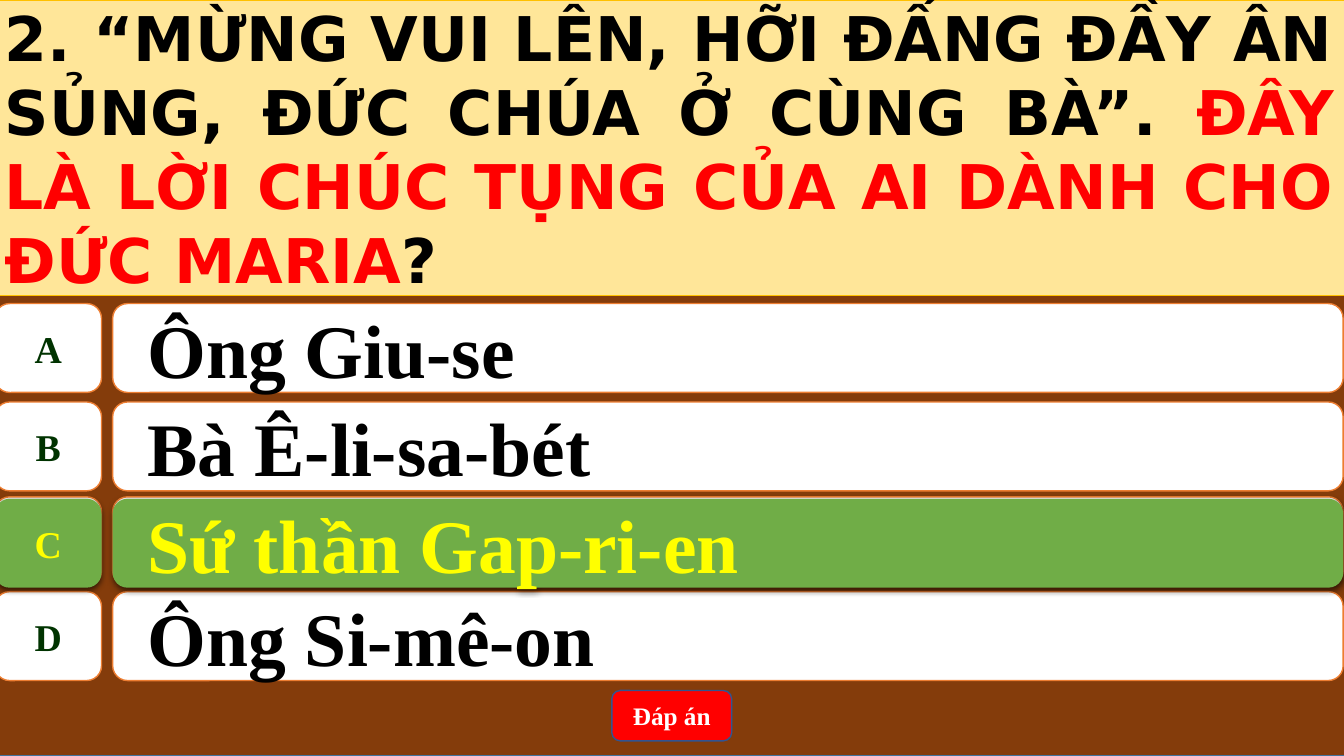
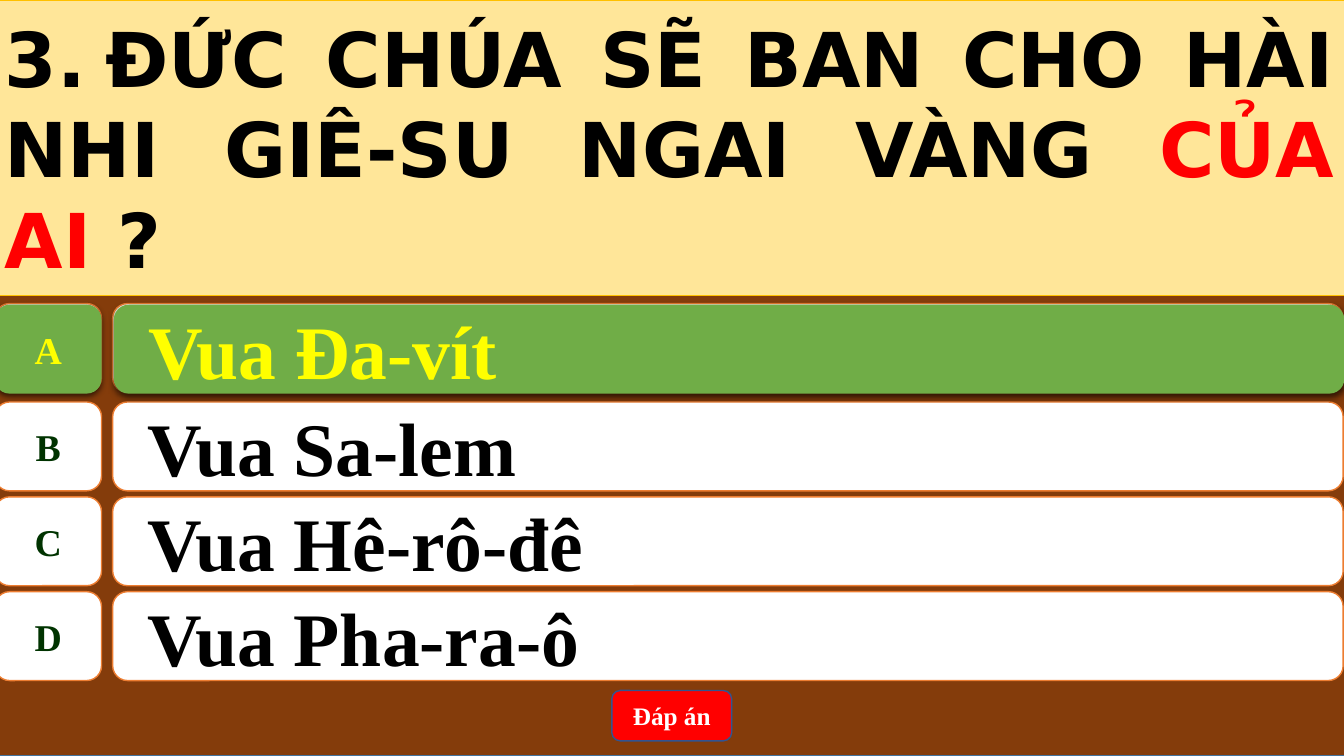
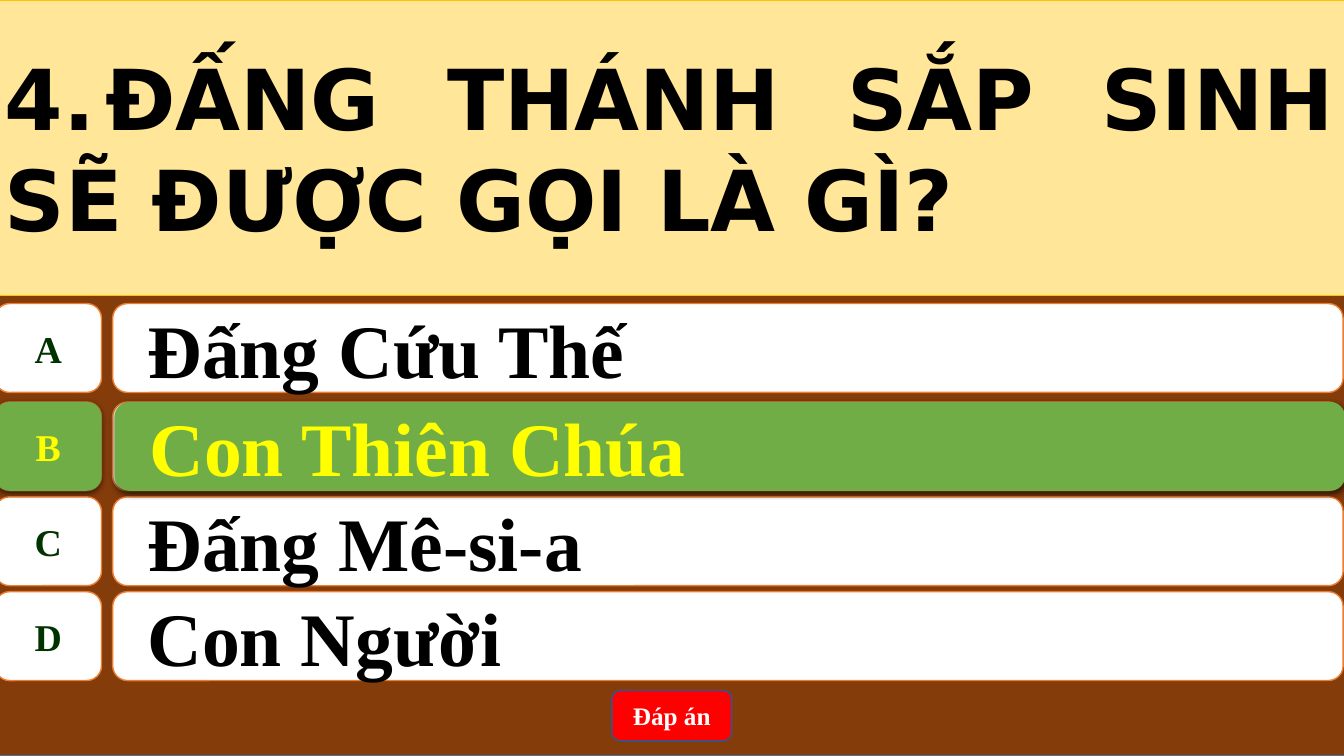
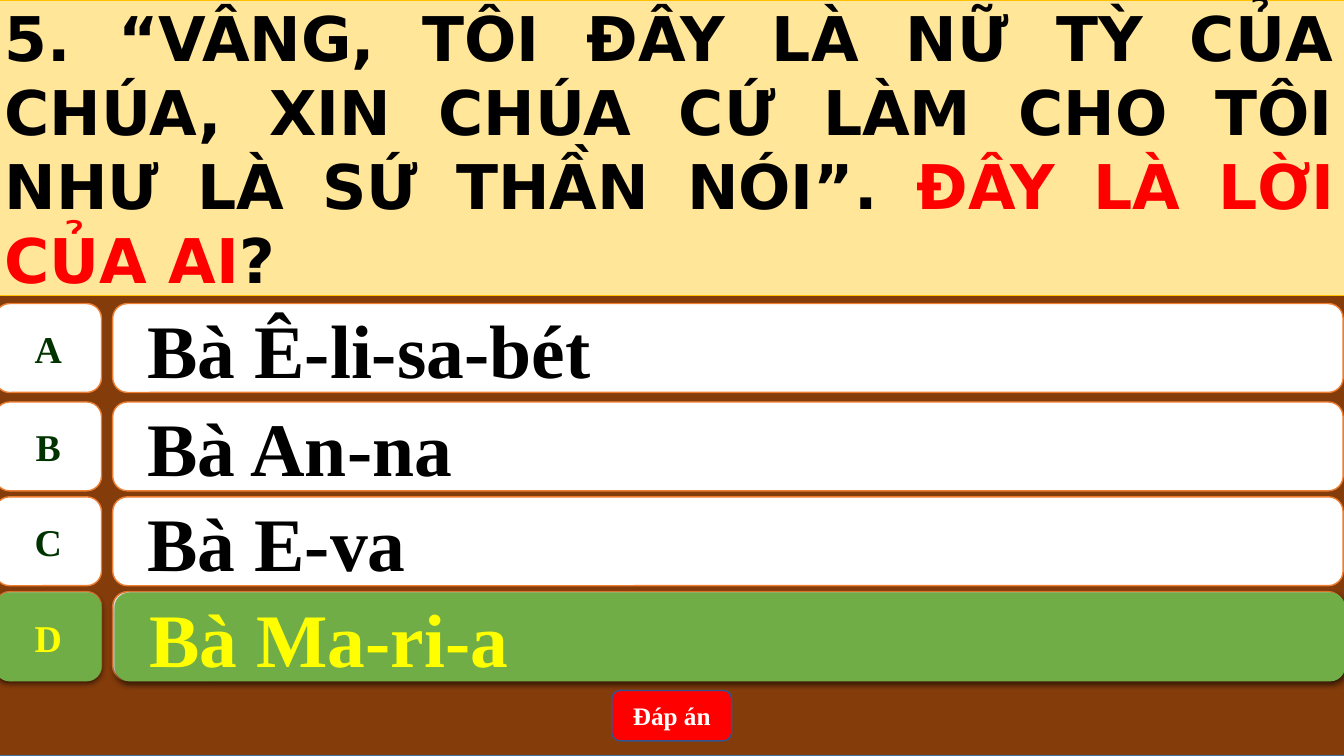
from lxml.etree import SubElement as Sub
from pptx import Presentation
from pptx.dml.color import RGBColor as Rgb
from pptx.enum.shapes import MSO_SHAPE as Form
from pptx.enum.text import MSO_ANCHOR as Anchor, PP_ALIGN as Align
from pptx.oxml.ns import qn
from pptx.util import Cm, Pt

BROWN = Rgb(0x84, 0x3C, 0x0B)
BLUE = Rgb(0x43, 0x73, 0x9E)
NAVY = Rgb(0x32, 0x54, 0x91)
CREAM = Rgb(0xFF, 0xE6, 0x99)
GOLD = Rgb(0xFF, 0xC0, 0x00)
ORANGE = Rgb(0xED, 0x7D, 0x31)
GREEN = Rgb(0x70, 0xAD, 0x47)
FOREST = Rgb(0x00, 0x33, 0x00)
YELLOW = Rgb(0xFF, 0xFF, 0x00)
RED = Rgb(0xFF, 0x00, 0x00)
WHITE = Rgb(0xFF, 0xFF, 0xFF)
BLACK = Rgb(0x00, 0x00, 0x00)

SERIF, SANS = "Times New Roman", "DejaVu Sans"
LEFT, WIDE, HIGH = -0.13, 34.01, 19.05
TOPS = {"A": 7.65, "B": 10.13, "C": 12.52, "D": 14.91}
BREAK = "\v"

QUIZ = [
    dict(
        size=44,
        ask=[
            ("2. “MỪNG VUI LÊN, HỠI ĐẤNG ĐẦY ÂN SỦNG, ĐỨC CHÚA Ở CÙNG BÀ”. ", BLACK),
            ("ĐÂY LÀ LỜI CHÚC TỤNG CỦA AI DÀNH CHO", RED),
            (BREAK, RED),
            ("ĐỨC MARIA", RED),
            ("?", BLACK),
        ],
        picks=["Ông Giu-se", "Bà Ê-li-sa-bét", "Sứ thần Gap-ri-en", "Ông Si-mê-on"],
        right="C",
        shift=(0, 0.05),
    ),
    dict(
        size=54,
        ask=[
            ("3.\tĐỨC CHÚA SẼ BAN CHO HÀI NHI GIÊ-SU NGAI VÀNG ", BLACK),
            ("CỦA AI ", RED),
            ("?", BLACK),
        ],
        picks=["Vua Đa-vít", "Vua Sa-lem", "Vua Hê-rô-đê", "Vua Pha-ra-ô"],
        right="A",
        shift=(0.03, 0.03),
    ),
    dict(
        size=60,
        ask=[("4.\tĐẤNG THÁNH SẮP SINH SẼ ĐƯỢC GỌI LÀ GÌ?", BLACK)],
        picks=["Đấng Cứu Thế", "Con Thiên Chúa", "Đấng Mê-si-a", "Con Người"],
        right="B",
        shift=(0.05, 0),
    ),
    dict(
        size=44,
        ask=[
            ("5. “VÂNG, TÔI ĐÂY LÀ NỮ TỲ CỦA CHÚA, XIN CHÚA CỨ LÀM CHO TÔI NHƯ LÀ SỨ THẦN NÓI”. ", BLACK),
            ("ĐÂY LÀ LỜI CỦA AI", RED),
            ("?", BLACK),
        ],
        picks=["Bà Ê-li-sa-bét", "Bà An-na", "Bà E-va", "Bà Ma-ri-a"],
        right="D",
        shift=(0.05, 0.02),
    ),
]


def panel(shapes, form, box, fill, line=None, weight=1):
    """Add a flat filled shape, outlined if a line colour is given."""
    shape = shapes.add_shape(form, *map(Cm, box))
    shape.shadow.inherit = False
    shape.fill.solid()
    shape.fill.fore_color.rgb = fill
    if line is None:
        shape.line.fill.background()
    else:
        shape.line.color.rgb = line
        shape.line.width = Pt(weight)
    return shape


def write(shape, parts, size, face=SERIF, align=Align.CENTER, wrap=True):
    """Fill a shape with one bold paragraph made of (text, colour) parts."""
    frame = shape.text_frame
    frame.word_wrap = wrap
    frame.vertical_anchor = Anchor.MIDDLE
    para = frame.paragraphs[0]
    para.alignment = align
    font = para.font
    font.name, font.size, font.bold = face, Pt(size), True
    for text, color in parts:
        if text == BREAK:
            para.add_line_break()
            continue
        run = para.add_run()
        run.text = text
        run.font.color.rgb = color
    return frame


def shade(shape):
    """Give a shape a soft shadow falling straight down."""
    glow = shape.shadow._element.find(qn("a:effectLst"))
    drop = Sub(glow, qn("a:outerShdw"), blurRad=str(Pt(4.5)), dist=str(Pt(1.5)),
               dir="5400000", algn="ctr", rotWithShape="0")
    tint = Sub(drop, qn("a:srgbClr"), val=str(BLACK))
    Sub(tint, qn("a:alpha"), val="63000")


def choice(slide, key, text, shift=(0, 0), right=False):
    """Draw one answer row: its letter tile and its text bar."""
    dx, dy = shift
    top = TOPS[key] + dy
    fill, line = (GREEN, None) if right else (WHITE, ORANGE)
    shapes = slide.shapes.add_group_shape().shapes
    tile = panel(shapes, Form.FLOWCHART_ALTERNATE_PROCESS, (LEFT, top, 2.69, 2.24), fill, line)
    write(tile, [(key, YELLOW if right else FOREST)], 27, wrap=False)
    bar = panel(shapes, Form.ROUNDED_RECTANGLE, (2.84 + dx, top, 31.01, 2.24), fill, line)
    frame = write(bar, [(text, YELLOW if right else BLACK)], 54, align=Align.LEFT)
    frame.margin_left = Cm(0.77)
    if right:
        shade(tile)
        shade(bar)


def question(slide, size, ask, picks, right, shift):
    """Draw a quiz slide with its answers and the right one lit up."""
    panel(slide.shapes, Form.RECTANGLE, (LEFT, 0, WIDE, HIGH), BROWN, BLUE)
    rows = dict(zip(TOPS, picks))
    for key, text in rows.items():
        choice(slide, key, text)
    button = panel(slide.shapes, Form.ROUNDED_RECTANGLE, (15.42, 17.4, 3.02, 1.27), RED, NAVY)
    write(button, [("Đáp án", WHITE)], 18)
    band = panel(slide.shapes, Form.RECTANGLE, (LEFT, 0, WIDE, 7.44), CREAM, GOLD, 0.5)
    write(band, ask, size, SANS, Align.JUSTIFY)
    choice(slide, right, rows[right], shift, right=True)


def main():
    """Build the quiz deck."""
    deck = Presentation()
    deck.slide_width, deck.slide_height = Cm(33.87), Cm(HIGH)
    for item in QUIZ:
        question(deck.slides.add_slide(deck.slide_layouts[6]), **item)
    deck.save("out.pptx")


if __name__ == "__main__":
    main()
